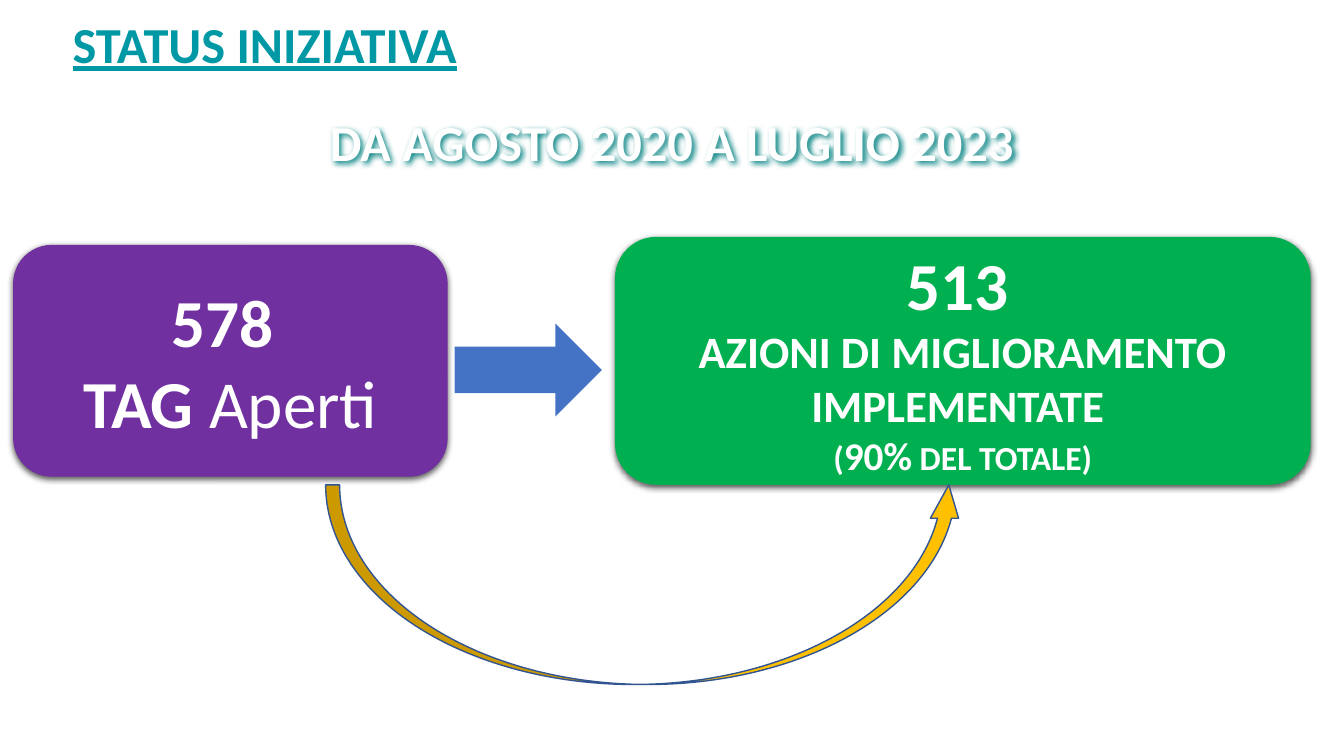
from lxml import etree
from pptx import Presentation
from pptx.dml.color import RGBColor
from pptx.enum.shapes import MSO_SHAPE
from pptx.enum.text import MSO_ANCHOR, PP_ALIGN
from pptx.oxml.ns import qn
from pptx.util import Inches, Pt

WHITE = RGBColor(0xFF, 0xFF, 0xFF)
TEAL = RGBColor(0x00, 0x98, 0xA4)
DARK_TEAL = RGBColor(0x00, 0x80, 0x80)
PURPLE = RGBColor(0x70, 0x30, 0xA0)
GREEN = RGBColor(0x00, 0xB0, 0x50)
BLUE = RGBColor(0x44, 0x72, 0xC4)
GOLD = RGBColor(0xFF, 0xC0, 0x00)
NAVY = RGBColor(0x32, 0x54, 0x91)
BLACK = RGBColor(0, 0, 0)


def place(shape, box):
    shape.left, shape.top, shape.width, shape.height = map(Inches, box)


def add_shadow(shape, color, alpha, blur, distance, angle):
    """Outer shadow; blur and distance in points."""
    effects = etree.SubElement(shape._element.spPr, qn("a:effectLst"))
    shadow = etree.SubElement(
        effects, qn("a:outerShdw"), blurRad=str(Pt(blur)), dist=str(Pt(distance)),
        dir=str(angle * 60000), algn="ctr", rotWithShape="0")
    tint = etree.SubElement(shadow, qn("a:srgbClr"), val=str(color))
    etree.SubElement(tint, qn("a:alpha"), val=str(alpha * 1000))


def write(frame, lines, align):
    """Each line is a list of runs: (text, size, bold, color)."""
    frame.word_wrap = True
    for index, line in enumerate(lines):
        paragraph = frame.paragraphs[0] if index == 0 else frame.add_paragraph()
        paragraph.alignment = align
        for text, size, bold, color in line:
            run = paragraph.add_run()
            run.text = text
            run.font.name = "Calibri"
            run.font.size = Pt(size)
            run.font.bold = bold
            run.font.color.rgb = color


def add_title(slide, box):
    title = slide.shapes.title
    place(title, box)
    title.text_frame.vertical_anchor = MSO_ANCHOR.TOP
    write(title.text_frame, [[("STATUS INIZIATIVA", 36, True, TEAL)]], PP_ALIGN.LEFT)
    title.text_frame.paragraphs[0].runs[0].font.underline = True


def add_period(slide, box):
    period = slide.shapes.add_textbox(*map(Inches, box))
    write(period.text_frame, [[("DA AGOSTO 2020 A LUGLIO 2023", 36, True, WHITE)]],
          PP_ALIGN.CENTER)
    # The box has no fill, so its shadow falls from the letters
    add_shadow(period, DARK_TEAL, 100, 4, 2, 45)


def add_card(slide, box, color, lines):
    card = slide.shapes.add_shape(MSO_SHAPE.ROUNDED_RECTANGLE, *map(Inches, box))
    card.fill.solid()
    card.fill.fore_color.rgb = color
    card.line.fill.background()
    add_shadow(card, BLACK, 63, 4.5, 1.5, 90)
    card.text_frame.vertical_anchor = MSO_ANCHOR.MIDDLE
    write(card.text_frame, lines, PP_ALIGN.CENTER)


def add_arrow(slide, kind, box, color):
    arrow = slide.shapes.add_shape(kind, *map(Inches, box))
    arrow.shadow.inherit = False
    arrow.fill.solid()
    arrow.fill.fore_color.rgb = color
    arrow.line.fill.background()
    return arrow


def add_return_arrow(slide, box):
    """Curved arrow turned on its side to fill the given box."""
    left, top, width, height = box
    upright = (left + (width - height) / 2, top + (height - width) / 2, height, width)
    curve = add_arrow(slide, MSO_SHAPE.CURVED_LEFT_ARROW, upright, GOLD)
    curve.rotation = 90
    curve._element.spPr.find(qn("a:xfrm")).set("flipV", "1")
    for index, value in enumerate((0.07, 0.141, 0.167)):
        curve.adjustments[index] = value
    curve.line.color.rgb = NAVY
    curve.line.width = Pt(1)


def build_status_slide(prs):
    slide = prs.slides.add_slide(prs.slide_layouts[5])
    # Headings
    add_title(slide, (0.62, 0.08, 6.31, 0.71))
    add_period(slide, (2.4, 1.05, 8.53, 0.71))
    # Opened tags lead to implemented actions
    add_card(slide, (6.1, 2.35, 6.9, 2.46), GREEN, [
        [("513", 48, True, WHITE), (" ", 32, True, WHITE)],
        [("AZIONI DI MIGLIORAMENTO IMPLEMENTATE ", 32, True, WHITE)],
        [("(", 24, True, WHITE), ("90%", 28, True, WHITE),
         (" DEL TOTALE)", 24, True, WHITE)],
    ])
    add_card(slide, (0.13, 2.43, 4.31, 2.3), PURPLE, [
        [("578 ", 48, True, WHITE)],
        [("TAG ", 48, True, WHITE), ("Aperti", 48, False, WHITE)],
    ])
    # Arrows
    add_arrow(slide, MSO_SHAPE.RIGHT_ARROW, (4.51, 3.21, 1.46, 0.92), BLUE)
    add_return_arrow(slide, (3.23, 4.81, 6.32, 1.98))


def main():
    prs = Presentation()
    prs.slide_width, prs.slide_height = Inches(13.33), Inches(7.5)
    build_status_slide(prs)
    prs.save("out.pptx")


if __name__ == "__main__":
    main()
